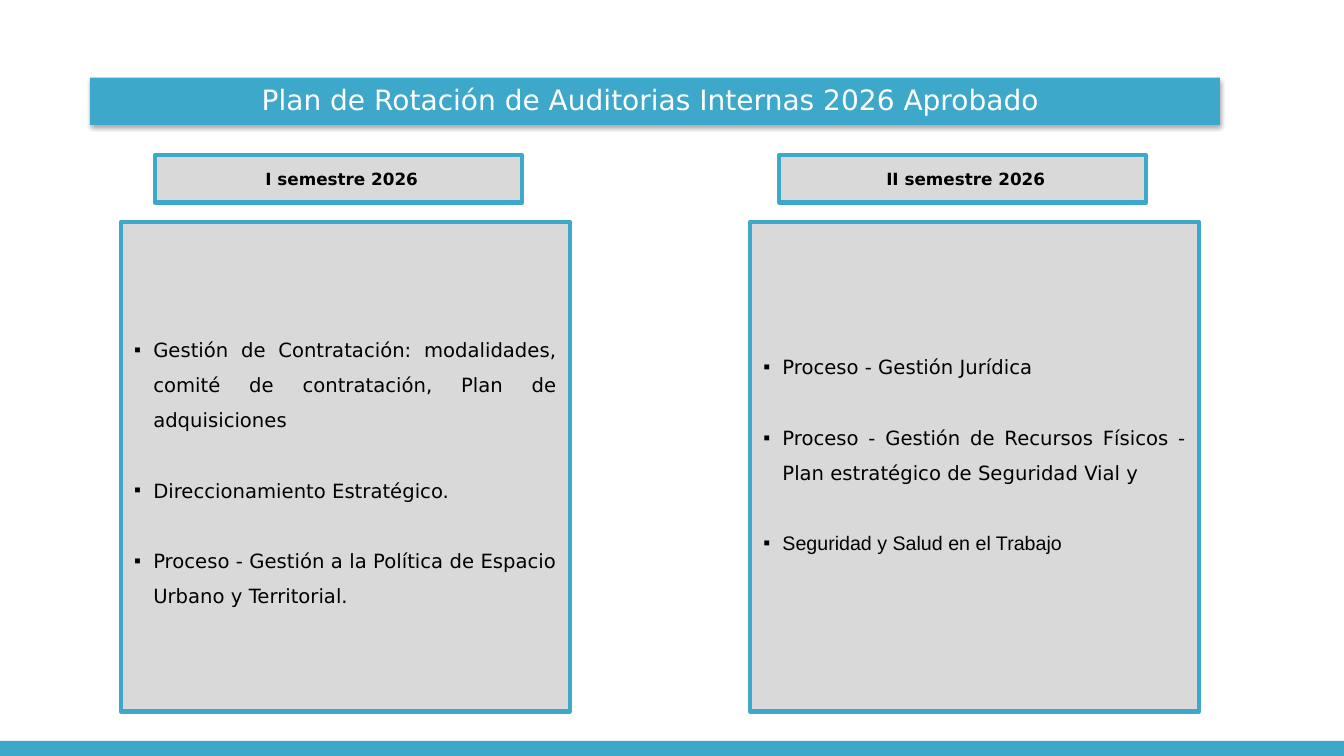
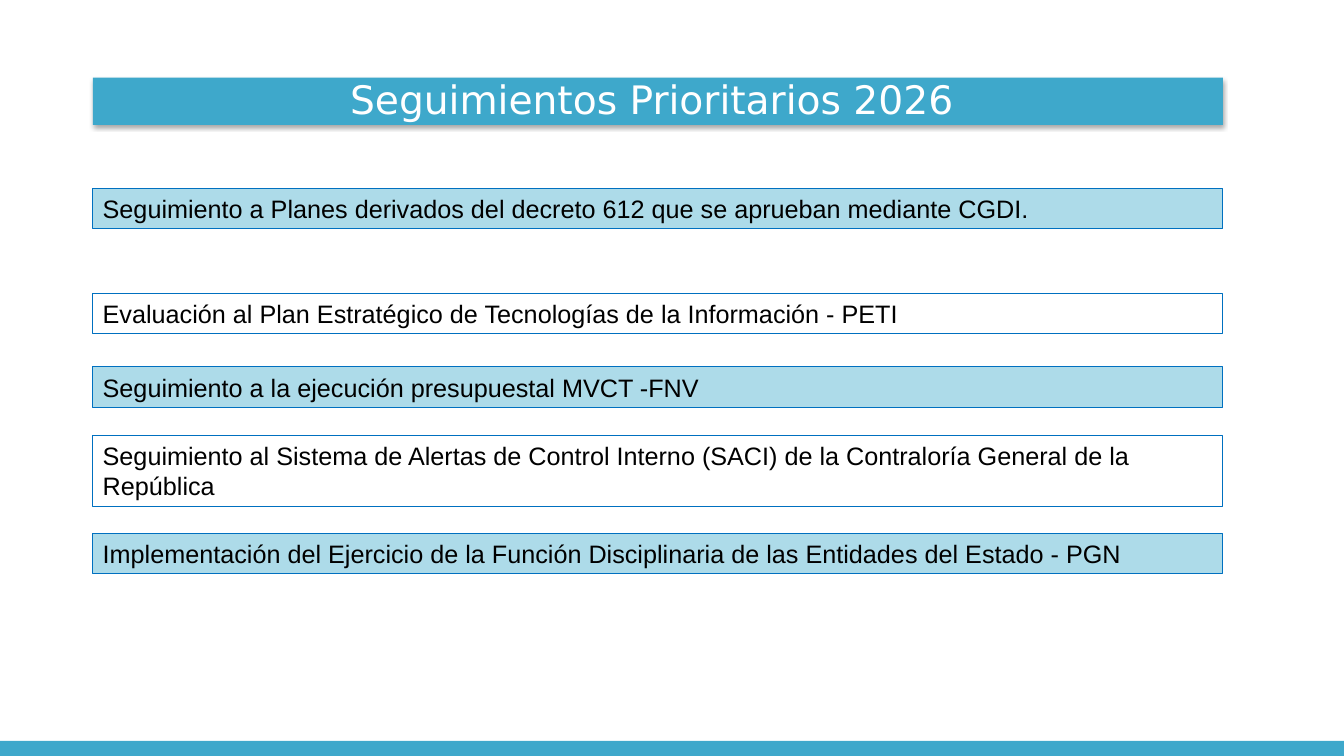
from dataclasses import dataclass

from lxml import etree
from pptx import Presentation
from pptx.dml.color import RGBColor
from pptx.enum import shapes, text
from pptx.oxml import ns
from pptx.util import Inches, Pt


@dataclass(frozen=True)
class Theme:
    teal: str = "3EA8CB"
    pale: str = "ADDBE9"
    gray: str = "D9D9D9"
    blue: str = "0070C0"
    white: str = "FFFFFF"
    black: str = "000000"
    sans: str = "DejaVu Sans"
    arial: str = "Arial"
    head: int = 12
    item: int = 14
    row: int = 18


T = Theme()
WIDE, HIGH = 13.33, 7.5
BAND = 0.15
BAR = 11.21
INSETS = (0.1, 0.05, 0.1, 0.05)
GAP = 25  # points between list items, one line at 1.5 spacing

PLAN = {
    "title": "Plan de Rotación de Auditorias Internas 2026 Aprobado ",
    "size": 20,
    "left": 0.89,
}
# heading, left of heading, left of panel, bottom inset, items with font
TERMS = [
    (" I semestre 2026", 1.54, 1.2, 0.07, [
        ("Gestión de Contratación: modalidades, comité de contratación, "
         "Plan de adquisiciones ", T.sans),
        ("Direccionamiento Estratégico.", T.sans),
        ("Proceso - Gestión a la Política de Espacio Urbano y Territorial.",
         T.sans),
    ]),
    (" II semestre 2026", 7.73, 7.44, 0.42, [
        ("Proceso - Gestión Jurídica ", T.sans),
        ("Proceso - Gestión de Recursos Físicos - Plan estratégico de "
         "Seguridad Vial y ", T.sans),
        ("Seguridad y Salud en el Trabajo ", T.arial),
    ]),
]

TRACK = {
    "title": "Seguimientos Prioritarios 2026 ",
    "size": 28,
    "left": 0.92,
}
# top, height, wording
ROWS = [
    (1.87, 0.4, "Seguimiento a Planes derivados del decreto 612 que se "
                "aprueban mediante CGDI."),
    (2.91, 0.4, "Evaluación al Plan Estratégico de Tecnologías de la "
                "Información - PETI"),
    (3.64, 0.4, "Seguimiento a la ejecución presupuestal MVCT -FNV"),
    (4.32, 0.71, "Seguimiento al Sistema de Alertas de Control Interno (SACI) "
                 "de la Contraloría General de la República"),
    (5.29, 0.4, "Implementación del Ejercicio de la Función Disciplinaria de "
                "las Entidades del Estado - PGN"),
]


def rgb(code):
    return RGBColor.from_string(code)


def box(slide, at, fill=None, line=None, width=0.75, insets=INSETS,
        anchor=text.MSO_ANCHOR.MIDDLE):
    shape = slide.shapes.add_shape(
        shapes.MSO_SHAPE.RECTANGLE, *[Inches(n) for n in at])
    shape.shadow.inherit = False
    if fill:
        shape.fill.solid()
        shape.fill.fore_color.rgb = rgb(fill)
    else:
        shape.fill.background()
    if line:
        shape.line.color.rgb = rgb(line)
        shape.line.width = Pt(width)
    else:
        shape.line.fill.background()
    frame = shape.text_frame
    frame.word_wrap = True
    frame.vertical_anchor = anchor
    (frame.margin_left, frame.margin_top,
     frame.margin_right, frame.margin_bottom) = [Inches(n) for n in insets]
    return shape


def write(para, words, size, font=T.sans, color=T.black, bold=False,
          align=text.PP_ALIGN.CENTER):
    para.alignment = align
    run = para.add_run()
    run.text = words
    run.font.size = Pt(size)
    run.font.name = font
    run.font.bold = bold
    run.font.color.rgb = rgb(color)


def cast(shape):
    """Give the shape a soft shadow straight below."""
    effects = shape._element.spPr.find(ns.qn("a:effectLst"))
    outer = etree.SubElement(
        effects, ns.qn("a:outerShdw"), blurRad=str(Pt(3.1)),
        dist=str(Pt(1.8)), dir="5400000", algn="t", rotWithShape="0")
    tint = etree.SubElement(outer, ns.qn("a:srgbClr"), val=T.black)
    etree.SubElement(tint, ns.qn("a:alpha"), val="35000")


def bullet(para):
    props = para._p.get_or_add_pPr()
    props.set("marL", str(Inches(0.19)))
    props.set("indent", str(-Inches(0.19)))
    etree.SubElement(props, ns.qn("a:buFont"), typeface=T.arial)
    etree.SubElement(props, ns.qn("a:buChar"), char="▪")


def start(deck, page):
    """Add a slide with the bottom band and the title bar."""
    slide = deck.slides.add_slide(deck.slide_layouts[6])
    box(slide, (0, HIGH - BAND, WIDE, BAND), T.teal)
    bar = box(slide, (page["left"], 0.77, BAR, 0.47), T.teal)
    cast(bar)
    para = bar.text_frame.paragraphs[0]
    para.line_spacing = 0.9
    write(para, page["title"], page["size"], color=T.white)
    return slide


def term(slide, name, left, edge, bottom, items):
    head = box(slide, (left, 1.54, 3.64, 0.47), T.gray, T.teal, 3)
    write(head.text_frame.paragraphs[0], name, T.head, bold=True)
    panel = box(slide, (edge, 2.2, 4.45, 4.86), T.gray, T.teal, 3,
                (0.13, 0.07, 0.13, bottom))
    frame = panel.text_frame
    for i, (words, font) in enumerate(items):
        para = frame.add_paragraph() if i else frame.paragraphs[0]
        bullet(para)
        para.line_spacing = 1.5
        if i:
            para.space_before = Pt(GAP)
        write(para, words, T.item, font, align=text.PP_ALIGN.JUSTIFY)


def main():
    deck = Presentation()
    deck.slide_width, deck.slide_height = Inches(WIDE), Inches(HIGH)

    slide = start(deck, PLAN)
    for part in TERMS:
        term(slide, *part)

    slide = start(deck, TRACK)
    for i, (top, high, words) in enumerate(ROWS):
        fill = None if i % 2 else T.pale
        row = box(slide, (TRACK["left"], top, BAR, high), fill, T.blue,
                  anchor=text.MSO_ANCHOR.TOP)
        write(row.text_frame.paragraphs[0], words, T.row, T.arial,
              align=text.PP_ALIGN.LEFT)

    deck.save("out.pptx")


if __name__ == "__main__":
    main()
